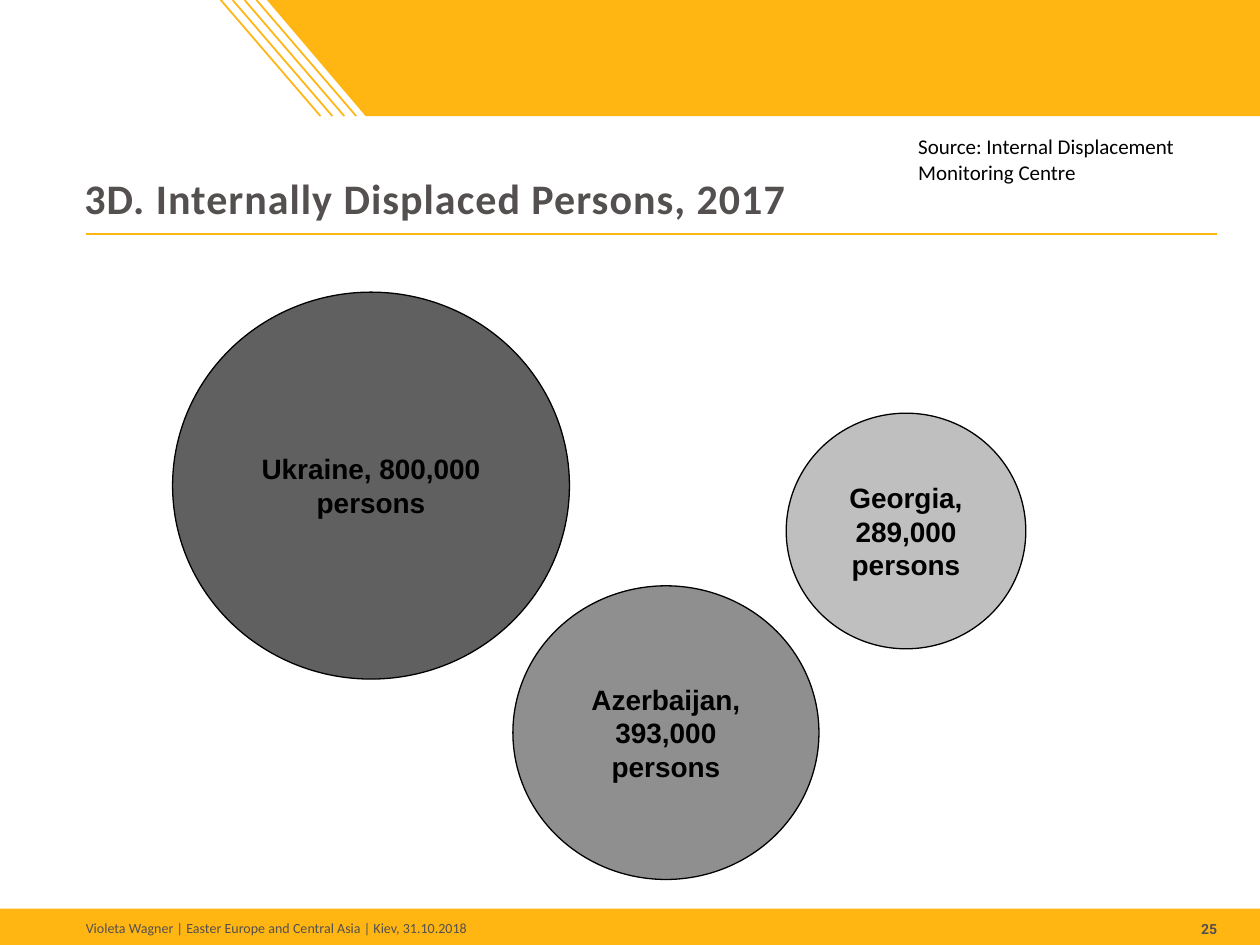
"""Build the slide on internally displaced persons in 2017."""
from dataclasses import dataclass

import pptx
import pptx.dml.color
import pptx.enum.shapes
import pptx.enum.text
import pptx.oxml
import pptx.oxml.ns
import pptx.util

Cm = pptx.util.Cm
Align = pptx.enum.text.PP_ALIGN
Anchor = pptx.enum.text.MSO_ANCHOR
Preset = pptx.enum.shapes.MSO_SHAPE

YELLOW, GREY, BLACK = "FFB612", "53504F", "000000"
PAGE_WIDTH, PAGE_HEIGHT = 25.4, 19.05
BAND_HEIGHT = 2.34
STRIPE_LEFT, STRIPE_STEP, STRIPE_RUN = 4.45, 0.24, 2.01


@dataclass
class Frame:
    left: float
    top: float
    width: float
    height: float

    def lengths(self) -> list:
        return [Cm(value) for value in (self.left, self.top, self.width, self.height)]


@dataclass
class Style:
    size: float
    font: str = "Calibri"
    color: str = GREY
    bold: bool = False
    align: Align = Align.LEFT
    anchor: Anchor = Anchor.MIDDLE
    inset: tuple = (0.25, 0.13)
    wrap: bool = True
    spacing: int = 0


@dataclass
class Label:
    text: str
    frame: Frame
    style: Style


@dataclass
class Circle:
    text: str
    frame: Frame
    fill: str


FOOTER = Style(8, inset=(0, 0), wrap=False)
LABELS = [
    Label("25", Frame(22.86, 18.57, 1.68, 0.33),
          Style(8, font="Roboto", bold=True, align=Align.RIGHT, inset=(0, 0))),
    Label("Violeta Wagner | Easter Europe and Central Asia | Kiev, 31.10.2018",
          Frame(1.73, 18.52, 10.97, 0.38), FOOTER),
    Label("3D. Internally Displaced Persons, 2017", Frame(1.45, 2.51, 23.24, 2.11),
          Style(24, bold=True, anchor=Anchor.BOTTOM, spacing=60)),
    Label("Source: Internal Displacement Monitoring Centre", Frame(18.26, 2.57, 6.4, 1.27),
          Style(12, color=BLACK, anchor=Anchor.TOP)),
]
CIRCLE_STYLE = Style(16, font="Arial", color=BLACK, bold=True, align=Align.CENTER)
CIRCLES = [
    Circle("Ukraine, 800,000 persons", Frame(3.48, 5.89, 8, 7.8), "606060"),
    Circle("Azerbaijan, 393,000 persons", Frame(10.34, 11.81, 6.17, 5.92), "8F8F8F"),
    Circle("Georgia, 289,000 persons", Frame(15.85, 8.33, 4.83, 4.75), "BFBFBF"),
]


def paint(color_format, color: str) -> None:
    color_format.rgb = pptx.dml.color.RGBColor.from_string(color)


def fill_shape(shape, color: str) -> None:
    shape.shadow.inherit = False
    shape.fill.solid()
    paint(shape.fill.fore_color, color)
    shape.line.fill.background()


def write(shape, text: str, style: Style) -> None:
    frame = shape.text_frame
    frame.text = text
    frame.word_wrap = style.wrap
    frame.vertical_anchor = style.anchor
    frame.margin_left = frame.margin_right = Cm(style.inset[0])
    frame.margin_top = frame.margin_bottom = Cm(style.inset[1])
    paragraph = frame.paragraphs[0]
    paragraph.alignment = style.align
    span = paragraph.runs[0]
    span.font.name = style.font
    span.font.size = pptx.util.Pt(style.size)
    span.font.bold = style.bold
    paint(span.font.color, style.color)
    if style.spacing:
        span.font._element.set("spc", str(style.spacing))


def draw_line(page, start: tuple, end: tuple, weight: float) -> None:
    line = page.shapes.add_connector(
        pptx.enum.shapes.MSO_CONNECTOR.STRAIGHT, *(Cm(value) for value in start + end))
    paint(line.line.color, YELLOW)
    line.line.width = pptx.util.Pt(weight)
    effects = pptx.oxml.parse_xml(f"<a:effectLst {pptx.oxml.ns.nsdecls('a')}/>")
    line._element.spPr.append(effects)


def draw_background(page) -> None:
    outline = page.shapes.build_freeform(Cm(5.38), 0)
    outline.add_line_segments([
        (Cm(PAGE_WIDTH), 0), (Cm(PAGE_WIDTH), Cm(BAND_HEIGHT)), (Cm(7.37), Cm(BAND_HEIGHT))])
    fill_shape(outline.convert_to_shape(), YELLOW)
    footer = Frame(0, 18.32, PAGE_WIDTH, PAGE_HEIGHT - 18.32)
    fill_shape(page.shapes.add_shape(Preset.RECTANGLE, *footer.lengths()), YELLOW)
    draw_line(page, (1.73, 4.72), (24.54, 4.72), 1.5)
    for index in range(4):
        left = STRIPE_LEFT + index * STRIPE_STEP
        draw_line(page, (left, 0), (left + STRIPE_RUN, BAND_HEIGHT), 1)


def draw_label(page, label: Label) -> None:
    write(page.shapes.add_textbox(*label.frame.lengths()), label.text, label.style)


def draw_circle(page, circle: Circle) -> None:
    shape = page.shapes.add_shape(Preset.OVAL, *circle.frame.lengths())
    fill_shape(shape, circle.fill)
    paint(shape.line.color, BLACK)
    shape.line.width = pptx.util.Pt(0.75)
    write(shape, circle.text, CIRCLE_STYLE)


def main() -> None:
    deck = pptx.Presentation()
    deck.slide_width, deck.slide_height = Cm(PAGE_WIDTH), Cm(PAGE_HEIGHT)
    page = deck.slides.add_slide(deck.slide_layouts[6])
    draw_background(page)
    for label in LABELS:
        draw_label(page, label)
    for circle in CIRCLES:
        draw_circle(page, circle)
    deck.save("out.pptx")


if __name__ == "__main__":
    main()
